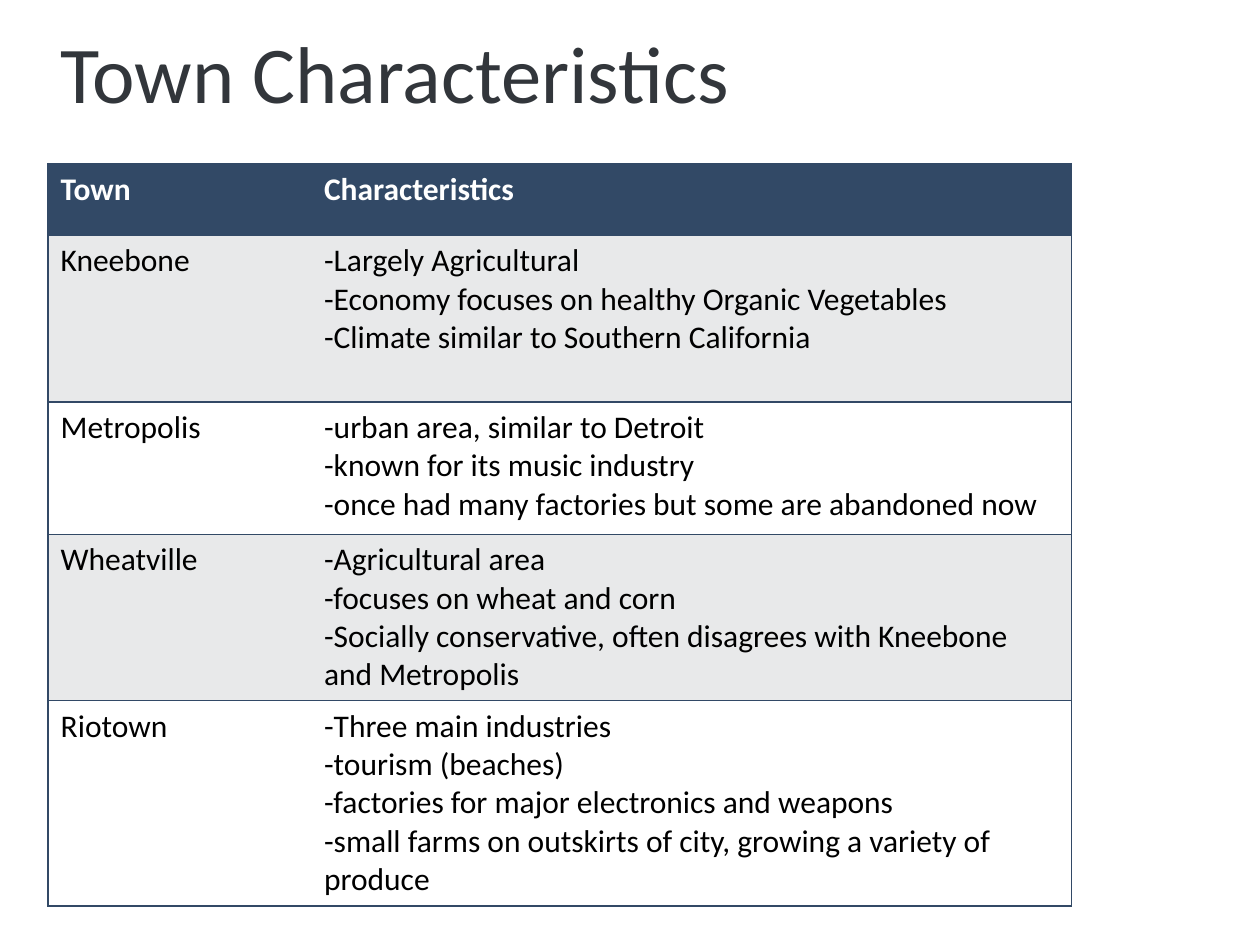
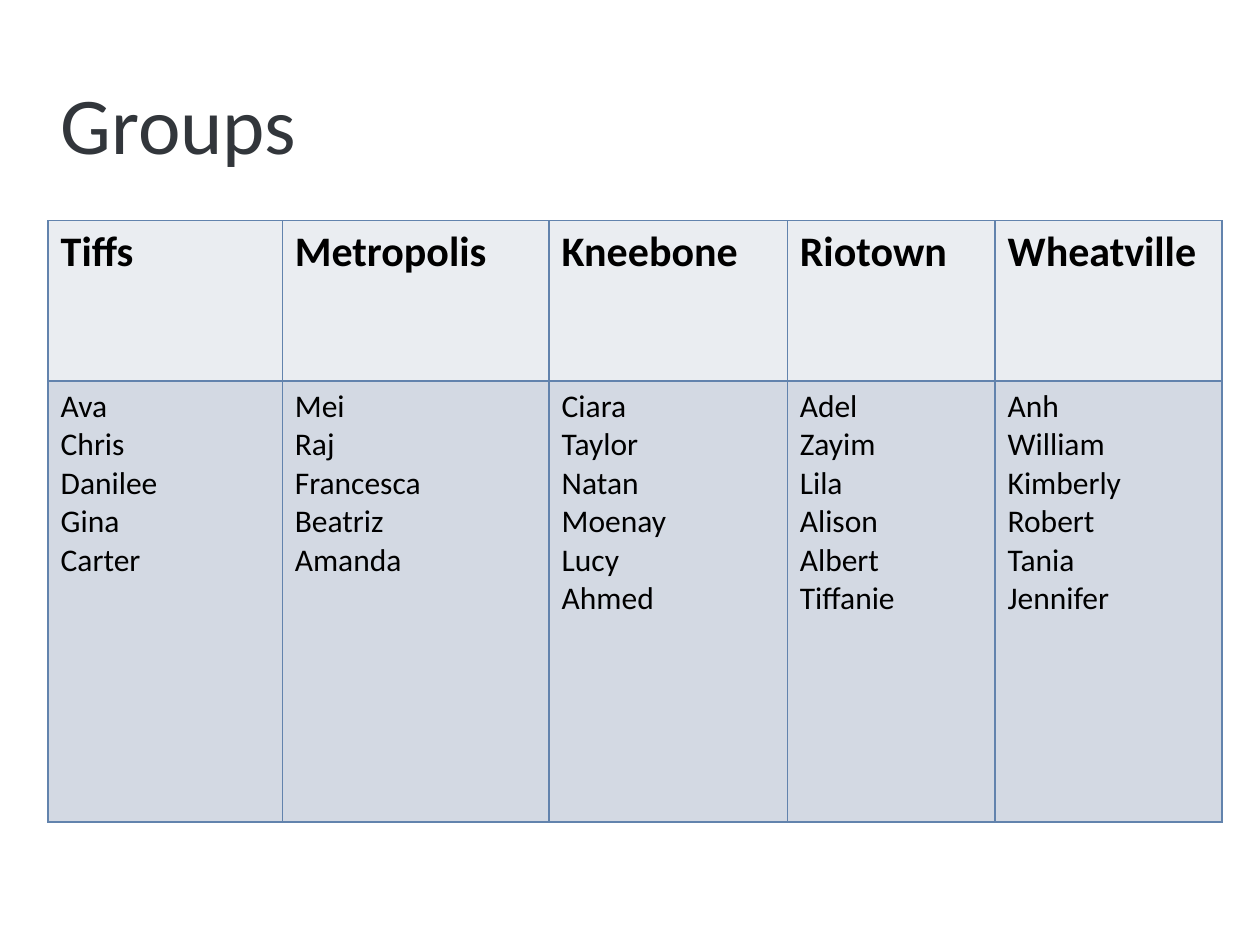
from lxml import etree
from pptx import Presentation
from pptx.dml.color import RGBColor
from pptx.enum.text import MSO_ANCHOR, MSO_AUTO_SIZE, PP_ALIGN
from pptx.oxml.ns import qn
from pptx.util import Cm, Pt

LEFT = PP_ALIGN.LEFT
MIDDLE = MSO_ANCHOR.MIDDLE
NO_AUTOFIT = MSO_AUTO_SIZE.NONE
TITLE_ONLY = 5

FONT = "Calibri"
SLATE, BLACK, WHITE = "32363B", "000000", "FFFFFF"
NAVY, PALE_GREY = "324966", "E8E9EA"
STEEL, ICE, MIST = "6283AD", "EAEDF1", "D3D9E3"
MARGIN = 0.97

TOWNS = [
    ("Town", "Characteristics"),
    ("Kneebone", "-Largely Agricultural\n"
                 "-Economy focuses on healthy Organic Vegetables\n"
                 "-Climate similar to Southern California"),
    ("Metropolis", "-urban area, similar to Detroit\n"
                   "-known for its music industry\n"
                   "-once had many factories but some are abandoned now"),
    ("Wheatville", "-Agricultural area\n-focuses on wheat and corn\n"
                   "-Socially conservative, often disagrees with Kneebone and Metropolis"),
    ("Riotown", "-Three main industries\n-tourism (beaches)\n"
                "-factories for major electronics and weapons\n"
                "-small farms on outskirts of city, growing a variety of produce"),
]
GROUPS = [
    ("Tiffs", "Metropolis", "Kneebone", "Riotown", "Wheatville"),
    ("Ava\nChris\nDanilee\nGina\nCarter",
     "Mei\nRaj\nFrancesca\nBeatriz\nAmanda",
     "Ciara\nTaylor\nNatan\nMoenay\nLucy\nAhmed",
     "Adel\nZayim\nLila\nAlison\nAlbert\nTiffanie",
     "Anh\nWilliam Kimberly\nRobert\nTania\nJennifer"),
]


def rgb(value):
    return RGBColor.from_string(value)


def style_text(tf, size, color, bold=False):
    for p in tf.paragraphs:
        p.alignment = LEFT
        for r in p.runs:
            r.font.name = FONT
            r.font.size = Pt(size)
            r.font.bold = bold
            r.font.color.rgb = rgb(color)


def add_titled_slide(prs, title, top):
    s = prs.slides.add_slide(prs.slide_layouts[TITLE_ONLY])
    sp = s.shapes.title
    sp.left, sp.top, sp.width, sp.height = Cm(MARGIN), Cm(top), Cm(19.69), Cm(2.03)
    tf = sp.text_frame
    tf.text = title
    tf.auto_size = NO_AUTOFIT
    tf.vertical_anchor = MIDDLE
    style_text(tf, 46, SLATE)
    return s


def set_borders(cell, colors):
    """Draw 1 pt borders; colors are for left, right, top, bottom, None for no line."""
    tc_pr = cell._tc.get_or_add_tcPr()
    for side, color in zip("LRTB", colors):
        ln = etree.SubElement(tc_pr, qn(f"a:ln{side}"), w=str(Pt(1)))
        if color:
            fill = etree.SubElement(ln, qn("a:solidFill"))
            etree.SubElement(fill, qn("a:srgbClr"), val=color)
        else:
            etree.SubElement(ln, qn("a:noFill"))


def add_grid(s, top, widths, heights, rows, line, fills, header, inner_lines=True):
    """Add a table; fills has one colour a row, header is (size, colour)."""
    frame = s.shapes.add_table(len(rows), len(widths), Cm(MARGIN), Cm(top),
                               Cm(sum(widths)), Cm(sum(heights)))
    table = frame.table
    table.first_row = table.horz_banding = False
    for column, width in zip(table.columns, widths):
        column.width = Cm(width)
    inner = line if inner_lines else None
    last = len(widths) - 1
    for i, texts in enumerate(rows):
        table.rows[i].height = Cm(heights[i])
        size, color = (18, BLACK) if i else header
        for j, text in enumerate(texts):
            cell = table.cell(i, j)
            set_borders(cell, (inner if j else line, inner if j < last else line, line, line))
            cell.fill.solid()
            cell.fill.fore_color.rgb = rgb(fills[i])
            cell.text_frame.text = text
            style_text(cell.text_frame, size, color, bold=i == 0)


def main():
    prs = Presentation()
    prs.slide_width, prs.slide_height = Cm(25.4), Cm(19.05)

    s = add_titled_slide(prs, "Town Characteristics", 0.43)
    add_grid(s, 3.3, [5.31, 15.32], [1.45, 3.35, 2.67, 3.35, 4.14], TOWNS, NAVY,
             [NAVY] + [PALE_GREY, WHITE] * 2, (18, WHITE), inner_lines=False)

    s = add_titled_slide(prs, "Groups", 1.45)
    add_grid(s, 4.45, [4.72, 5.38, 4.8, 4.19, 4.57], [3.23, 8.89], GROUPS, STEEL,
             [ICE, MIST], (24, BLACK))

    prs.save("out.pptx")


if __name__ == "__main__":
    main()
